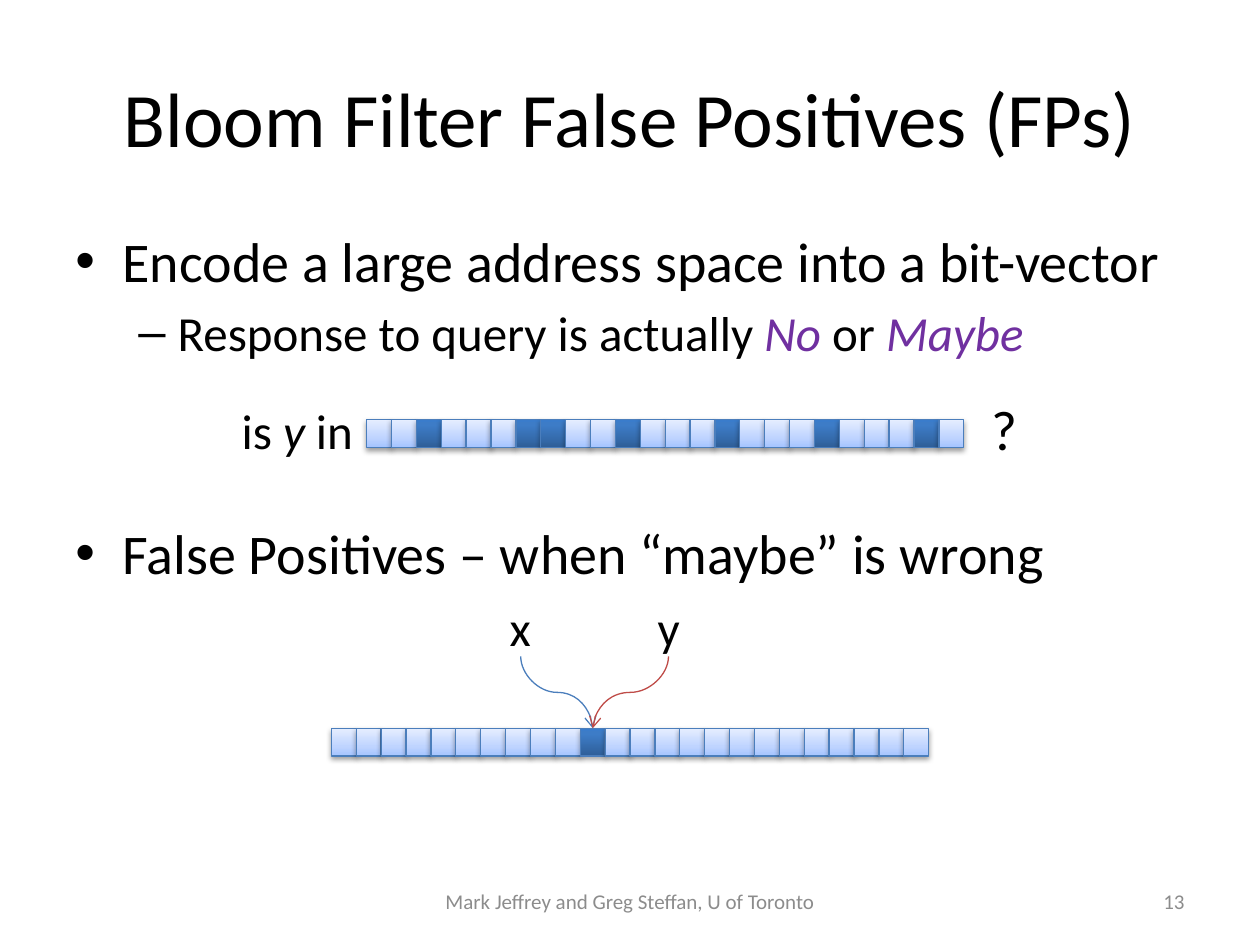
from copy import deepcopy
from dataclasses import dataclass

from lxml import etree
from pptx import Presentation
from pptx import util as u
from pptx.dml.color import RGBColor
from pptx.enum import shapes, text
from pptx.oxml import ns


@dataclass(frozen=True)
class Theme:
    font: str = "Calibri"
    ink: str = "000000"
    accent: str = "7030A0"
    muted: str = "8C8C8C"
    blue: str = "4B7EBC"
    red: str = "BF4C48"
    clear_bit: tuple = ((0, "A4C4FF"), (0.35, "BFD4FF"), (1, "E6EEFF"))
    set_bit: tuple = ((0, "2F5F99"), (0.8, "3D7CC7"), (1, "3A7CCB"))
    title_size: int = 44
    body_size: int = 32
    detail_size: int = 28
    footer_size: int = 12
    line_width: float = 0.75
    margins: tuple = (7.2, 3.6)


def add_xml(parent, tag, **attributes):
    return etree.SubElement(parent, ns.qn(tag), attributes)


class SlideBuilder:
    def __init__(self, slide, theme):
        self.slide = slide
        self.theme = theme

    def group(self):
        return self.slide.shapes.add_group_shape().shapes

    def add_runs(self, paragraph, parts, size, color=None):
        """Add plain strings, or (string, colour) pairs for italics."""
        for part in parts:
            content, italic_color = (part, None) if isinstance(part, str) else part
            run = paragraph.add_run()
            run.text = content
            run.font.name = self.theme.font
            run.font.size = u.Pt(size)
            run.font.italic = italic_color is not None
            run.font.color.rgb = RGBColor.from_string(
                italic_color or color or self.theme.ink)

    def text_box(self, box, parts=(), size=0, color=None, align=text.PP_ALIGN.LEFT,
                 anchor=text.MSO_ANCHOR.TOP, wrap=True, margins=None, target=None):
        target = self.slide.shapes if target is None else target
        frame = target.add_textbox(*map(u.Pt, box)).text_frame
        frame.word_wrap = wrap
        frame.vertical_anchor = anchor
        horizontal, vertical = margins or self.theme.margins
        frame.margin_left = frame.margin_right = u.Pt(horizontal)
        frame.margin_top = frame.margin_bottom = u.Pt(vertical)
        frame.paragraphs[0].alignment = align
        self.add_runs(frame.paragraphs[0], parts, size, color)
        return frame

    def bullet(self, paragraph, parts, size, symbol, left, hanging, before=0):
        self.add_runs(paragraph, parts, size)
        paragraph.space_before = u.Pt(before)
        properties = paragraph._p.get_or_add_pPr()
        properties.set("marL", str(u.Pt(left)))
        properties.set("indent", str(-u.Pt(hanging)))
        add_xml(properties, "a:buFont", typeface="Arial")
        add_xml(properties, "a:buChar", char=symbol)

    def bit(self, target, box, is_set):
        shape = target.add_shape(shapes.MSO_SHAPE.RECTANGLE, *map(u.Pt, box))
        shape.line.color.rgb = RGBColor.from_string(self.theme.blue)
        shape.line.width = u.Pt(self.theme.line_width)
        # Three-stop gradient, running upwards
        shape.fill.gradient()
        shape.fill.gradient_angle = 90
        properties = shape._element.spPr
        stop_list = properties.find(".//" + ns.qn("a:gsLst"))
        stop_list.append(deepcopy(stop_list[0]))
        colors = self.theme.set_bit if is_set else self.theme.clear_bit
        for stop, (position, color) in zip(shape.fill.gradient_stops, colors):
            stop.position = position
            stop.color.rgb = RGBColor.from_string(color)
        # Soft shadow below
        shape.shadow.inherit = False
        shadow = add_xml(properties.find(ns.qn("a:effectLst")), "a:outerShdw",
                         blurRad=str(u.Pt(3.1)), dist=str(u.Pt(1.6)),
                         dir="5400000", rotWithShape="0")
        black = add_xml(shadow, "a:srgbClr", val="000000")
        add_xml(black, "a:alpha", val="35000" if is_set else "38000")

    def bit_vector(self, target, left, top, set_bits, count=24, width=14.22, height=15.84):
        for index in range(count):
            self.bit(target, (left + index * width, top, width, height),
                     index in set_bits)

    def curved_arrow(self, target, start, end, color):
        """Arrow that leaves and arrives vertically: a curve turned a quarter."""
        (x1, y1), (x2, y2) = start, end
        center_x, center_y = (x1 + x2) / 2, (y1 + y2) / 2
        half_width, half_height = abs(y2 - y1) / 2, abs(x2 - x1) / 2
        goes_right = x2 > x1
        if goes_right:
            half_width = -half_width
        connector = target.add_connector(
            shapes.MSO_CONNECTOR.CURVE,
            u.Pt(center_x - half_width), u.Pt(center_y - half_height),
            u.Pt(center_x + half_width), u.Pt(center_y + half_height))
        connector.line.color.rgb = RGBColor.from_string(color)
        connector.line.width = u.Pt(self.theme.line_width)
        properties = connector._element.spPr
        properties.find(ns.qn("a:xfrm")).set(
            "rot", "16200000" if goes_right else "5400000")
        add_xml(properties.find(ns.qn("a:ln")), "a:tailEnd", type="arrow")
        add_xml(properties, "a:effectLst")


def main():
    theme = Theme()
    presentation = Presentation()
    presentation.slide_width, presentation.slide_height = u.Pt(720), u.Pt(540)
    slide = presentation.slides.add_slide(presentation.slide_layouts[6])
    builder = SlideBuilder(slide, theme)
    align, middle = text.PP_ALIGN, text.MSO_ANCHOR.MIDDLE

    # Title
    builder.text_box((36, 21.6, 648, 90), ["Bloom Filter False Positives (FPs)"],
                     theme.title_size, align=align.CENTER, anchor=middle)

    # Bullets, with room for the query between them
    body = builder.text_box((36, 126, 648, 356.4))
    builder.bullet(body.paragraphs[0], ["Encode a large address space into a bit-vector"],
                   theme.body_size, "•", 27, 27)
    builder.bullet(body.add_paragraph(),
                   ["Response to query is actually ", ("No", theme.accent),
                    " or ", ("Maybe", theme.accent)],
                   theme.detail_size, "–", 58.5, 22.5, before=5)
    builder.bullet(body.add_paragraph(), ["False Positives – when “maybe” is wrong"],
                   theme.body_size, "•", 27, 27, before=89.5)

    # Footer and slide number
    builder.text_box((246, 500.4, 228, 28.8), ["Mark Jeffrey and Greg Steffan, U of Toronto"],
                     theme.footer_size, theme.muted, align.CENTER, middle)
    builder.text_box((516, 500.4, 168, 28.8), ["13"],
                     theme.footer_size, theme.muted, align.RIGHT, middle)

    # Query: is y in the bit-vector?
    query = builder.group()
    builder.bit_vector(query, 209.5, 239.8, {2, 6, 7, 10, 14, 18, 22})
    builder.text_box((131, 225.4, 79.2, 41), ["is ", ("y ", theme.ink), "in"],
                     theme.detail_size, wrap=False, target=query)
    builder.text_box((559.4, 221.8, 29.5, 46), ["?"],
                     theme.body_size, wrap=False, target=query)

    # Collision: x and y share one bit
    collision = builder.group()
    builder.bit_vector(collision, 189.4, 416.2, {10})
    for name, center, color in (("x", 297.5, theme.blue), ("y", 382, theme.red)):
        builder.text_box((center - 6.25, 341.3, 12.5, 33.8), [name], theme.detail_size,
                         wrap=False, margins=(0, 0), target=collision)
        builder.curved_arrow(collision, (center, 375.1), (338.7, 416.2), color)

    presentation.save("out.pptx")


if __name__ == "__main__":
    main()
